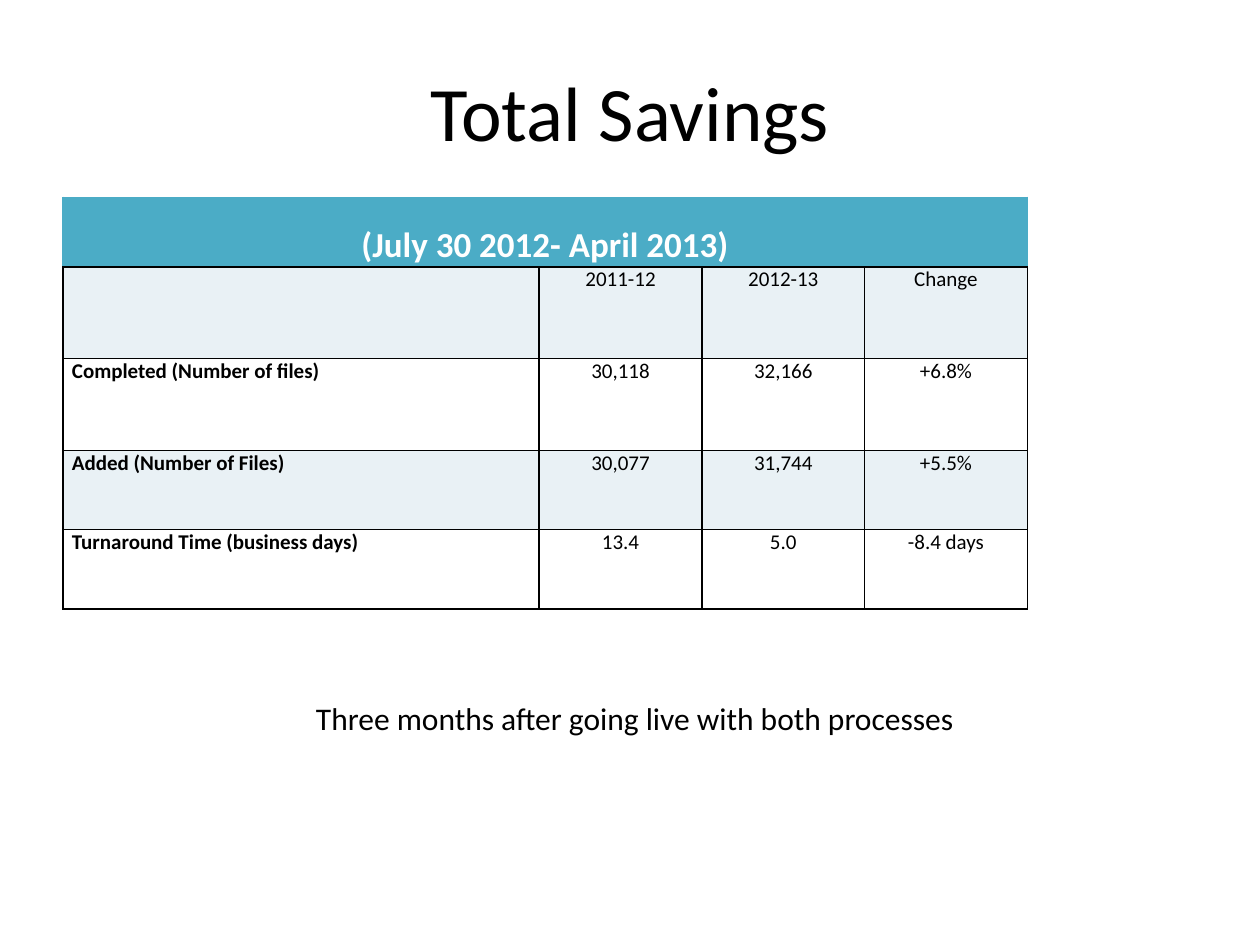
from dataclasses import dataclass

from lxml import etree
from pptx import Presentation
from pptx.dml.color import RGBColor
from pptx.enum.text import MSO_ANCHOR, PP_ALIGN
from pptx.oxml.ns import qn
from pptx.util import Cm, Pt

LEFT, CENTER = PP_ALIGN.LEFT, PP_ALIGN.CENTER
TOP, MIDDLE, BOTTOM = MSO_ANCHOR.TOP, MSO_ANCHOR.MIDDLE, MSO_ANCHOR.BOTTOM

TITLE = "Total Savings"
PERIOD = "(July 30 2012- April 2013)"
CAPTION = "Three months after going live with both processes"
ROWS = [
    ("", "2011-12", "2012-13", "Change"),
    ("Completed (Number of files)", "30,118", "32,166", "+6.8%"),
    ("Added (Number of Files)", "30,077", "31,744", "+5.5%"),
    ("Turnaround Time (business days)", "13.4", "5.0", "-8.4 days"),
]
COLUMN_WIDTHS = [9.6, 3.28, 3.28, 3.28]
ROW_HEIGHTS = [1.4, 1.85, 1.85, 1.6, 1.6]


@dataclass(frozen=True)
class Theme:
    font: str = "Calibri"
    text: str = "000000"
    header_text: str = "FFFFFF"
    header_fill: str = "4BACC6"
    band_fills: tuple = ("E9F1F5", "FFFFFF")
    border: str = "000000"
    border_width: int = 1
    title_size: int = 44
    header_size: int = 20
    caption_size: int = 18
    cell_size: int = 12


THEME = Theme()


def write_text(text_frame, text, size, color=THEME.text, bold=False, alignment=LEFT):
    text_frame.text = text
    paragraph = text_frame.paragraphs[0]
    paragraph.alignment = alignment
    for run in paragraph.runs:
        run.font.name = THEME.font
        run.font.size = Pt(size)
        run.font.bold = bold
        run.font.color.rgb = RGBColor.from_string(color)


def add_text_box(slide, bounds, text, size, alignment, anchor, wrap):
    text_frame = slide.shapes.add_textbox(*map(Cm, bounds)).text_frame
    text_frame.word_wrap = wrap
    text_frame.vertical_anchor = anchor
    write_text(text_frame, text, size, alignment=alignment)


def style_cell(cell, fill, outer_border, anchor=TOP):
    cell.margin_left = cell.margin_right = Cm(0.18)
    cell.margin_top = cell.margin_bottom = 0
    cell.vertical_anchor = anchor
    properties = cell._tc.get_or_add_tcPr()
    edges = {"L": outer_border, "R": outer_border, "T": outer_border, "B": THEME.border}
    for side, color in edges.items():
        line = etree.SubElement(properties, qn(f"a:ln{side}"), w=str(Pt(THEME.border_width)))
        solid = etree.SubElement(line, qn("a:solidFill"))
        etree.SubElement(solid, qn("a:srgbClr"), val=color)
    cell.fill.solid()
    cell.fill.fore_color.rgb = RGBColor.from_string(fill)


def add_savings_table(slide):
    table = slide.shapes.add_table(
        len(ROW_HEIGHTS), len(COLUMN_WIDTHS), Cm(1.27), Cm(3.98),
        Cm(sum(COLUMN_WIDTHS)), Cm(sum(ROW_HEIGHTS)),
    ).table
    table.horz_banding = False
    for column, width in zip(table.columns, COLUMN_WIDTHS):
        column.width = Cm(width)
    for row, height in zip(table.rows, ROW_HEIGHTS):
        row.height = Cm(height)

    for cell in table.rows[0].cells:
        style_cell(cell, THEME.header_fill, THEME.header_fill, BOTTOM)
    header = table.cell(0, 0)
    header.merge(table.cell(0, len(COLUMN_WIDTHS) - 1))
    write_text(header.text_frame, PERIOD, THEME.header_size, THEME.header_text, True, CENTER)

    for row_index, values in enumerate(ROWS):
        fill = THEME.band_fills[row_index % 2]
        for column_index, value in enumerate(values):
            cell = table.cell(row_index + 1, column_index)
            is_label = column_index == 0
            style_cell(cell, fill, THEME.border)
            write_text(cell.text_frame, value, THEME.cell_size, bold=is_label,
                       alignment=LEFT if is_label else CENTER)


def main():
    """Build the total savings slide."""
    presentation = Presentation()
    presentation.slide_width, presentation.slide_height = Cm(25.4), Cm(19.05)
    slide = presentation.slides.add_slide(presentation.slide_layouts[6])
    add_text_box(slide, (1.27, 0.64, 22.86, 3.18), TITLE, THEME.title_size, CENTER, MIDDLE, True)
    add_savings_table(slide)
    add_text_box(slide, (6.12, 13.97, 13.69, 1.02), CAPTION, THEME.caption_size, LEFT, TOP, False)
    presentation.save("out.pptx")


if __name__ == "__main__":
    main()
